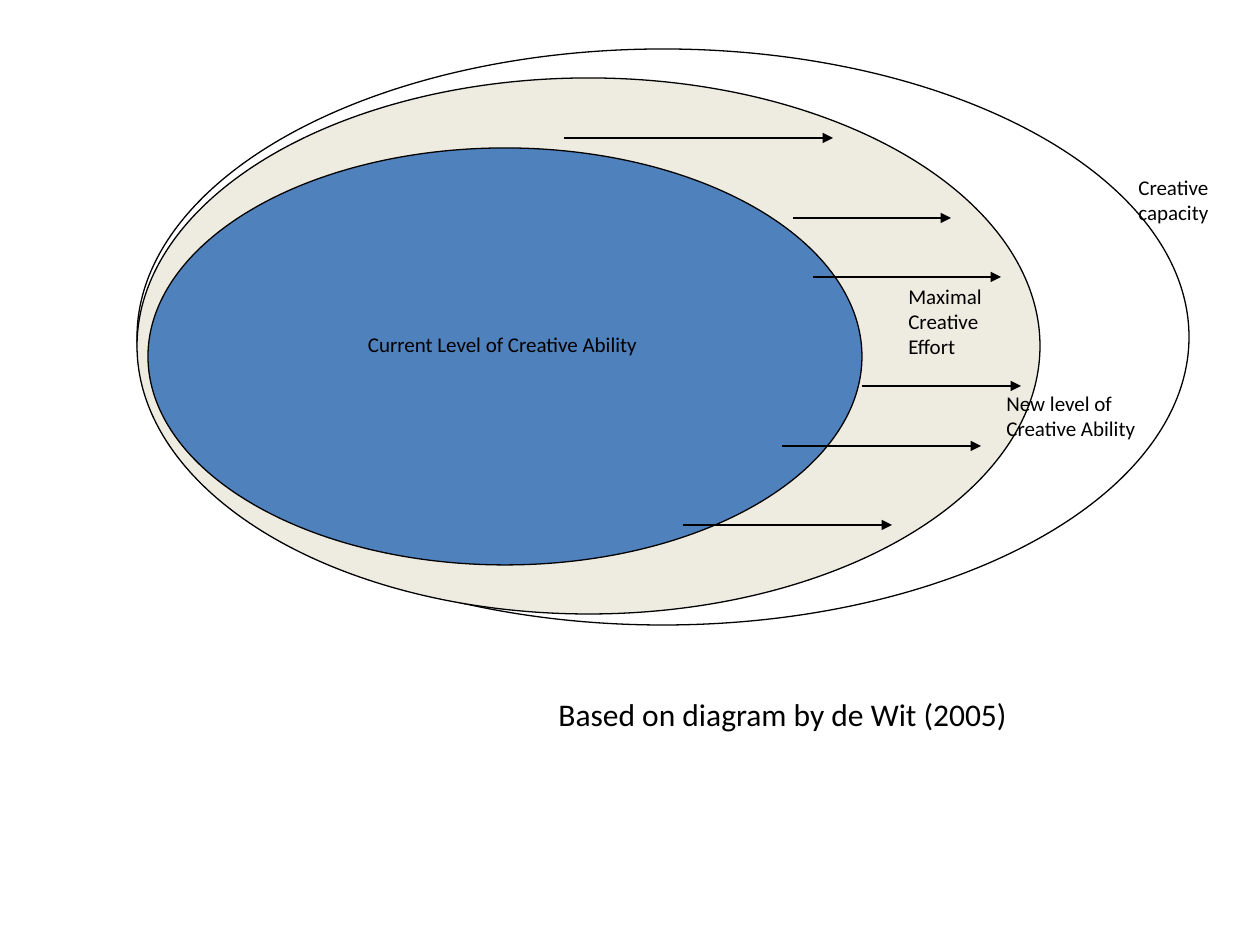
from lxml.etree import SubElement as Sub
from pptx import Presentation as Deck
from pptx.dml.color import RGBColor as Rgb
from pptx.enum.shapes import MSO_CONNECTOR as Link, MSO_SHAPE as Kind
from pptx.enum.text import MSO_ANCHOR as Anchor, MSO_AUTO_SIZE as Fit, PP_ALIGN as Align
from pptx.oxml.ns import qn
from pptx.util import Emu, Pt


def px(n):
    return Emu(round(n * 914400 / 126))


def tint(code):
    return Rgb.from_string(code)


class Page:
    """Holds the style and the current slide."""

    font = "Calibri"
    ink = "000000"
    thin = Pt(0.75)

    def __init__(self, deck):
        self.slide = deck.slides.add_slide(deck.slide_layouts[6])
        self.shapes = self.slide.shapes

    def text(self, frame, lines, size=12, align=Align.LEFT):
        for i, line in enumerate(lines):
            para = frame.add_paragraph() if i else frame.paragraphs[0]
            para.alignment = align
            run = para.add_run()
            run.text = line
            run.font.name = self.font
            run.font.size = Pt(size)
            run.font.color.rgb = tint(self.ink)

    def oval(self, box, fill=None):
        oval = self.shapes.add_shape(Kind.OVAL, *map(px, box))
        oval.shadow.inherit = False
        oval.line.color.rgb = tint(self.ink)
        oval.line.width = self.thin
        if fill:
            oval.fill.solid()
            oval.fill.fore_color.rgb = tint(fill)
        else:
            oval.fill.background()
        return oval

    def label(self, box, lines, size=12, wrap=False):
        frame = self.shapes.add_textbox(*map(px, box)).text_frame
        frame.word_wrap = wrap
        frame.auto_size = Fit.SHAPE_TO_FIT_TEXT
        self.text(frame, lines, size)

    def arrow(self, start, end, y):
        arrow = self.shapes.add_connector(Link.STRAIGHT, px(start), px(y), px(end), px(y))
        arrow.line.color.rgb = tint(self.ink)
        arrow.line.width = self.thin
        props = arrow.element.spPr
        Sub(props.find(qn("a:ln")), qn("a:tailEnd"), type="triangle")
        Sub(props, qn("a:effectLst"))


def main():
    deck = Deck()
    deck.slide_width, deck.slide_height = px(1260), px(945)
    page = Page(deck)

    page.oval((137, 49, 1052, 576))
    page.oval((137, 78, 903, 536), "EEECE1")
    core = page.oval((148, 148, 714, 417), "4F81BD").text_frame
    core.word_wrap = False
    core.vertical_anchor = Anchor.MIDDLE
    core.margin_bottom = px(31)
    page.text(core, ["Current Level of Creative Ability "], align=Align.CENTER)

    page.label((896, 277, 113, 89), ["Maximal", "Creative", "Effort"])
    page.label((994, 384, 188, 64), ["New level of", "Creative Ability"])
    page.label((1126, 168, 113, 64), ["Creative", "capacity"])

    for start, end, y in (
        (564, 833, 138),
        (793, 951, 218),
        (862, 1021, 386),
        (782, 981, 446),
        (683, 892, 525),
        (813, 1001, 277),
    ):
        page.arrow(start, end, y)

    page.label((546, 689, 625, 50), ["Based on diagram by de Wit (2005)"], 18, True)
    deck.save("out.pptx")


if __name__ == "__main__":
    main()
